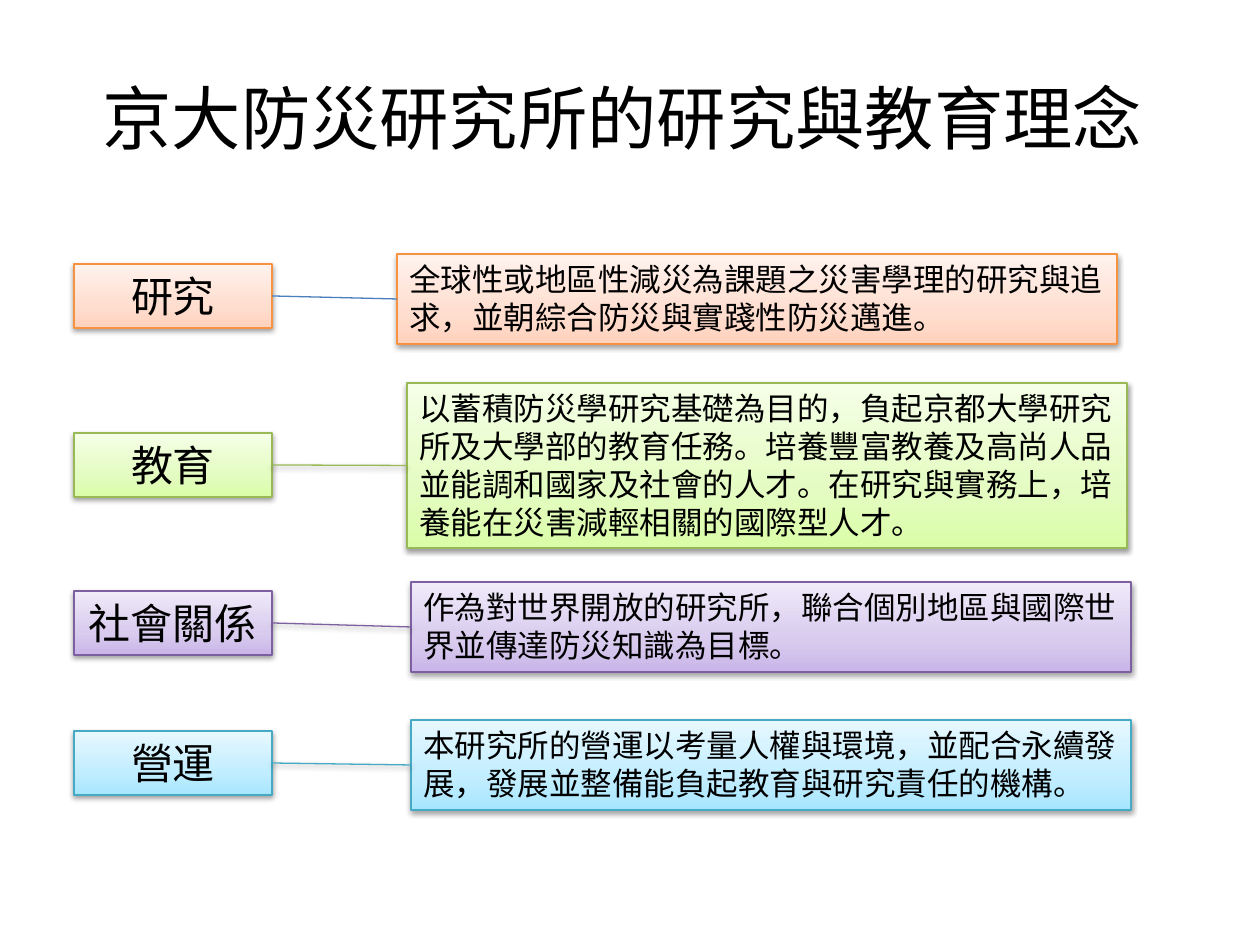
"""Build a slide that pairs four principles of a research institute with their descriptions."""
from pptx import Presentation
from pptx.dml.color import RGBColor
from pptx.enum.shapes import MSO_CONNECTOR, MSO_SHAPE
from pptx.enum.text import MSO_ANCHOR, MSO_AUTO_SIZE, PP_ALIGN
from pptx.oxml import parse_xml
from pptx.oxml.ns import nsdecls
from pptx.util import Emu, Pt
from lxml.etree import SubElement
from dataclasses import dataclass


@dataclass(frozen=True)
class Theme:
    font: str = "Noto Sans CJK SC"
    text: str = "000000"
    title_size: float = 39.6
    label_size: int = 24
    body_size: int = 18
    line_width: float = 0.75
    research: tuple = ("F69240", "FFD2BD", "FFDED0", "FFF2ED")
    education: tuple = ("98B955", "DAFDA7", "E4FCC2", "F5FFE7")
    society: tuple = ("7D60A0", "C9B5E8", "D8CBEE", "F0EAF9")
    management: tuple = ("46AAC5", "A7E6FF", "C1EDFF", "E7F8FF")
    first_link: str = "4B7EBC"


theme = Theme()
PX = 914400 / 126
LABEL_LEFT, LABEL_WIDTH, LABEL_HEIGHT = 74, 198, 64
BODY_WIDTH = 720
NO_EFFECT = f'<a:effectLst {nsdecls("a")}/>'
SHADOW = (
    f'<a:effectLst {nsdecls("a")}>'
    '<a:outerShdw blurRad="40000" dist="20000" dir="5400000" rotWithShape="0">'
    '<a:srgbClr val="000000"><a:alpha val="38000"/></a:srgbClr>'
    '</a:outerShdw></a:effectLst>'
)


def write(frame, text, size=theme.body_size, align=PP_ALIGN.LEFT,
          fit=MSO_AUTO_SIZE.SHAPE_TO_FIT_TEXT, anchor=MSO_ANCHOR.TOP):
    frame.word_wrap = True
    frame.auto_size = fit
    frame.vertical_anchor = anchor
    paragraph = frame.paragraphs[0]
    paragraph.alignment = align
    run = paragraph.add_run()
    run.text = text
    run.font.size = Pt(size)
    run.font.color.rgb = RGBColor.from_string(theme.text)
    run.font.name = theme.font
    east_asian = SubElement(run.font._element, "{http://schemas.openxmlformats.org/drawingml/2006/main}ea")
    east_asian.set("typeface", theme.font)


def add_box(shapes, bounds, palette):
    shape = shapes.add_shape(MSO_SHAPE.RECTANGLE, *[Emu(round(value * PX)) for value in bounds])
    stops = "".join(
        f'<a:gs pos="{position}"><a:srgbClr val="{color}"/></a:gs>'
        for position, color in zip((0, 35000, 100000), palette[1:])
    )
    properties = shape._element.spPr
    properties.append(parse_xml(
        f'<a:gradFill {nsdecls("a")} rotWithShape="1"><a:gsLst>{stops}</a:gsLst>'
        '<a:lin ang="16200000" scaled="0"/></a:gradFill>'
    ))
    shape.line.color.rgb = RGBColor.from_string(palette[0])
    shape.line.width = Pt(theme.line_width)
    properties.append(parse_xml(SHADOW))
    return shape


presentation = Presentation()
presentation.slide_width = Emu(round(1260 * PX))
presentation.slide_height = Emu(round(945 * PX))
slide = presentation.slides.add_slide(presentation.slide_layouts[5])

title = slide.shapes.title
title.left, title.top, title.width, title.height = [
    Emu(round(value * PX)) for value in (63, 38, 1134, 158)
]
write(title.text_frame, "京大防災研究所的研究與教育理念 ", size=theme.title_size,
      align=PP_ALIGN.CENTER, fit=MSO_AUTO_SIZE.NONE, anchor=MSO_ANCHOR.MIDDLE)

principles = [
    ("研究", 264, (397, 254, 90), theme.research, theme.first_link, NO_EFFECT,
     "全球性或地區性減災為課題之災害學理的研究與追求，並朝綜合防災與實踐性防災邁進。"),
    ("教育", 433, (407, 383, 165), theme.education, theme.education[0], SHADOW,
     "以蓄積防災學研究基礎為目的，負起京都大學研究所及大學部的教育任務。"
     "培養豐富教養及高尚人品並能調和國家及社會的人才。"
     "在研究與實務上，培養能在災害減輕相關的國際型人才。"),
    ("社會關係", 591, (411, 582, 90), theme.society, theme.society[0], SHADOW,
     "作為對世界開放的研究所，聯合個別地區與國際世界並傳達防災知識為目標。"),
    ("營運", 731, (411, 720, 90), theme.management, theme.management[0], SHADOW,
     "本研究所的營運以考量人權與環境，並配合永續發展，發展並整備能負起教育與研究責任的機構。"),
]

for name, label_top, (left, top, height), palette, link_color, effect, description in principles:
    shapes = slide.shapes.add_group_shape().shapes
    label = add_box(shapes, (LABEL_LEFT, label_top, LABEL_WIDTH, LABEL_HEIGHT), palette)
    write(label.text_frame, name, size=theme.label_size, align=PP_ALIGN.CENTER)
    body = add_box(shapes, (left, top, BODY_WIDTH, height), palette)
    write(body.text_frame, description)

    link = shapes.add_connector(
        MSO_CONNECTOR.STRAIGHT,
        label.left + label.width, label.top + label.height // 2,
        body.left, body.top + body.height // 2,
    )
    link.begin_connect(label, 3)
    link.end_connect(body, 1)
    link.line.color.rgb = RGBColor.from_string(link_color)
    link.line.width = Pt(theme.line_width)
    link._element.spPr.append(parse_xml(effect))

presentation.save("out.pptx")
